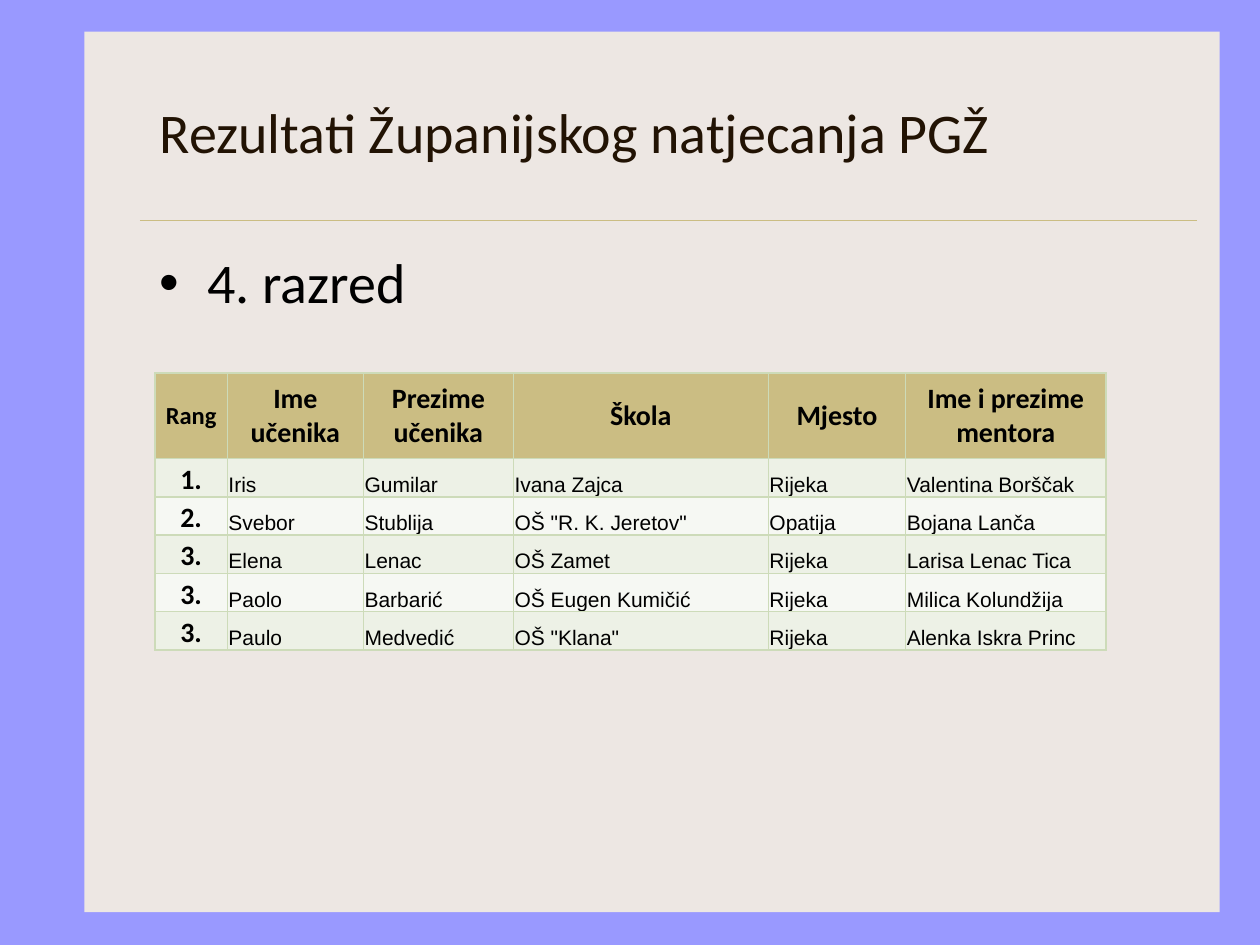
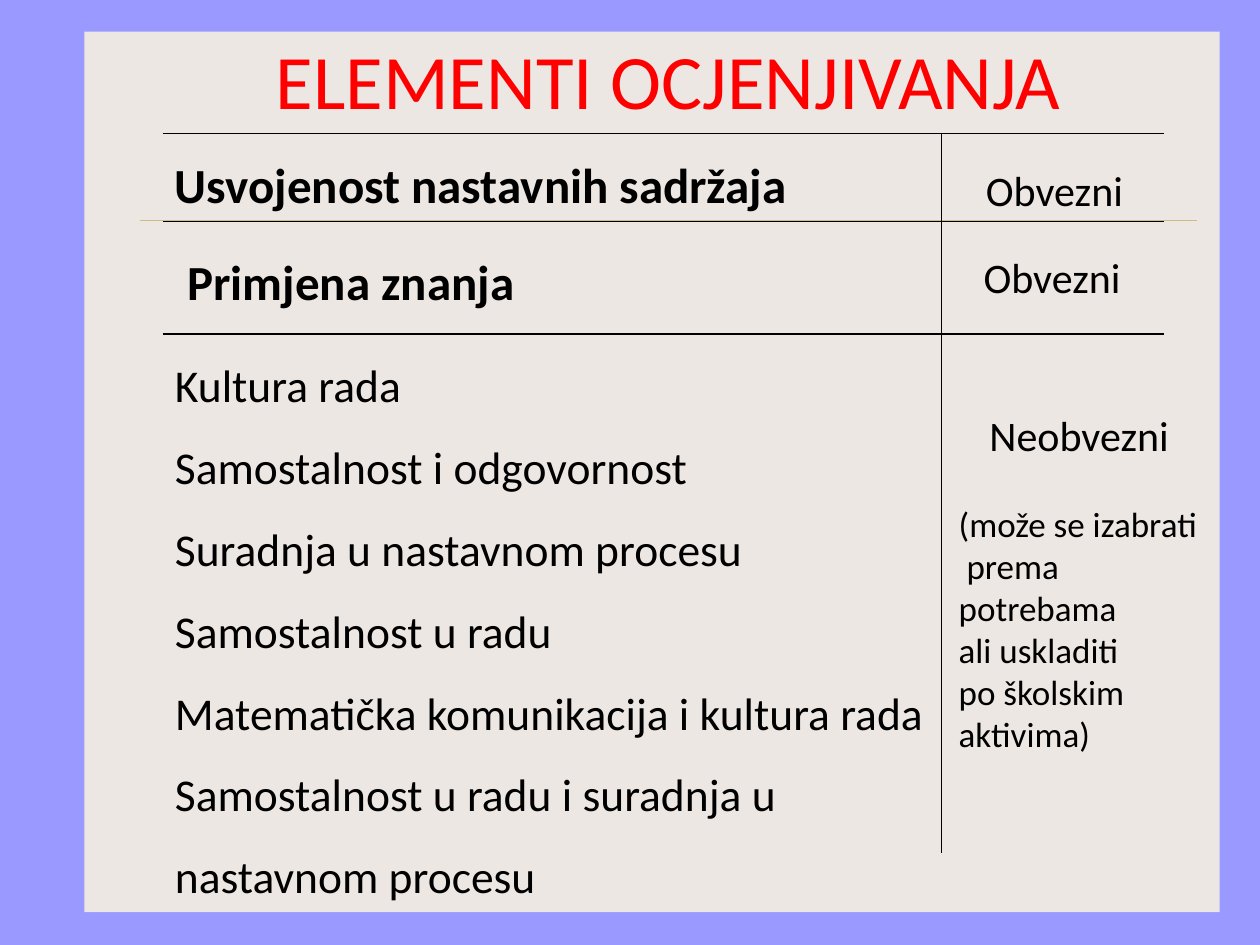
"""Builds two slides: county competition results and grading elements."""
from lxml import etree
from pptx import Presentation
from pptx.dml.color import RGBColor
from pptx.enum import shapes, text
from pptx.oxml import ns
from pptx.util import Pt

PERIWINKLE = RGBColor(0x99, 0x99, 0xFF)
PAPER = RGBColor(0xED, 0xE7, 0xE3)
GOLD = RGBColor(0xCB, 0xBD, 0x83)
BROWN = RGBColor(0x22, 0x13, 0x04)
RED = RGBColor(0xFF, 0, 0)
BLACK = RGBColor(0, 0, 0)
GRID_GREEN = RGBColor(0xCD, 0xDB, 0xB9)
ROW_TINTS = (RGBColor(0xED, 0xF1, 0xE6), RGBColor(0xF6, 0xF8, 0xF3))

LEFT, CENTER = text.PP_ALIGN.LEFT, text.PP_ALIGN.CENTER
TOP, MIDDLE, BOTTOM = (text.MSO_ANCHOR.TOP, text.MSO_ANCHOR.MIDDLE,
                       text.MSO_ANCHOR.BOTTOM)

RESULTS_TITLE = "Rezultati Županijskog natjecanja PGŽ"
GRADE = "4. razred"
HEADINGS = ("Rang", "Ime učenika", "Prezime učenika", "Škola", "Mjesto",
            "Ime i prezime mentora")
PUPILS = (
    ("1.", "Iris", "Gumilar", "Ivana Zajca", "Rijeka", "Valentina Borščak"),
    ("2.", "Svebor", "Stublija", 'OŠ "R. K. Jeretov"', "Opatija", "Bojana Lanča"),
    ("3.", "Elena", "Lenac", "OŠ Zamet", "Rijeka", "Larisa Lenac Tica"),
    ("3.", "Paolo", "Barbarić", "OŠ Eugen Kumičić", "Rijeka", "Milica Kolundžija"),
    ("3.", "Paulo", "Medvedić", 'OŠ "Klana"', "Rijeka", "Alenka Iskra Princ"),
)
RESULTS_AT = (88.6, 213.2)
RESULTS_COLUMNS = (41.3, 77.8, 85.7, 145.7, 78.5, 114.4)
RESULTS_ROWS = (48.8,) + (21.9,) * len(PUPILS)

GRADING_TITLE = "ELEMENTI OCJENJIVANJA"
GRADING_AT = (92.9, 25.9)
GRADING_COLUMNS = (445, 127.4)
GRADING_ROWS = (50.4, 50.4, 64.1, 296.6)
REQUIRED_ELEMENTS = (
    ("Usvojenost nastavnih sadržaja", (92.9, 85, 368, 41)),
    ("Primjena znanja", (100.1, 140.4, 203, 41)),
)
REQUIRED = "Obvezni"
REQUIRED_AT = ((555.8, 90.7, 93.6, 36), (554.4, 140.4, 93.6, 36))
OPTIONAL_ELEMENTS = (
    "Kultura rada", "Samostalnost i odgovornost", "Suradnja u nastavnom procesu",
    "Samostalnost u radu", "Matematička komunikacija i kultura rada",
    "Samostalnost u radu i suradnja u", "nastavnom procesu",
)
OPTIONAL = "Neobvezni"
CHOICE_NOTE = (
    ("(može se izabrati", {"before": 24.4}), ("prema", {"indent": 4.5}),
    ("potrebama", {}), ("ali uskladiti", {}), ("po školskim", {}),
    ("aktivima)", {}),
)


def write(paragraph, words, size=20, font="Calibri", color=BLACK, bold=False,
          align=LEFT, spacing=None, before=0, indent=0, bullet=None):
    """Fill one paragraph with formatted words."""
    properties = paragraph._p.get_or_add_pPr()
    if indent:
        properties.set("marL", str(Pt(indent)))
    if bullet:
        properties.set("indent", str(-Pt(indent)))
        etree.SubElement(properties, ns.qn("a:buFont"), typeface="Arial")
        etree.SubElement(properties, ns.qn("a:buChar"), char=bullet)
    paragraph.alignment = align
    paragraph.space_before = Pt(before)
    if spacing:
        paragraph.line_spacing = spacing
    run = paragraph.add_run()
    run.text = words
    run.font.size, run.font.name, run.font.bold = Pt(size), font, bold
    run.font.color.rgb = color


def add_text(slide, place, lines, anchor=TOP, wrap=False, **style):
    """Add a text box; a line is words or words with their own format."""
    frame = slide.shapes.add_textbox(*map(Pt, place)).text_frame
    frame.word_wrap = wrap
    frame.vertical_anchor = anchor
    if not wrap:
        frame.auto_size = text.MSO_AUTO_SIZE.SHAPE_TO_FIT_TEXT
    for number, line in enumerate(lines):
        words, own = (line, {}) if isinstance(line, str) else line
        paragraph = frame.add_paragraph() if number else frame.paragraphs[0]
        write(paragraph, words, **{**style, **own})


def add_grid(slide, corner, columns, rows):
    """Add an unbanded table with the given column widths and row heights."""
    size = sum(columns), sum(rows)
    grid = slide.shapes.add_table(len(rows), len(columns),
                                  *map(Pt, corner + size)).table
    grid.first_row = grid.horz_banding = False
    for column, width in zip(grid.columns, columns):
        column.width = Pt(width)
    for row, height in zip(grid.rows, rows):
        row.height = Pt(height)
    return grid


def set_borders(cell, color, sides):
    """Draw the named sides of a cell and hide the others."""
    properties = cell._tc.get_or_add_tcPr()
    for side in "LRTB":
        edge = etree.SubElement(properties, ns.qn("a:ln" + side), w=str(Pt(1)))
        if side in sides:
            paint = etree.SubElement(edge, ns.qn("a:solidFill"))
            etree.SubElement(paint, ns.qn("a:srgbClr"), val=str(color))
        else:
            etree.SubElement(edge, ns.qn("a:noFill"))


def add_page(deck):
    """Add a slide with the paper panel and the gold rule."""
    slide = deck.slides.add_slide(deck.slide_layouts[6])
    paper = slide.shapes.add_shape(shapes.MSO_SHAPE.RECTANGLE,
                                   *map(Pt, (48.2, 18, 648.7, 503.3)))
    paper.shadow.inherit = False
    paper.fill.solid()
    paper.fill.fore_color.rgb = PAPER
    paper.line.fill.background()
    rule = slide.shapes.add_connector(shapes.MSO_CONNECTOR.STRAIGHT,
                                      *map(Pt, (79.9, 126, 684, 126)))
    rule.line.color.rgb = GOLD
    rule.line.width = Pt(0.25)
    etree.SubElement(rule._element.spPr, ns.qn("a:effectLst"))
    return slide


def add_title(slide, title, left, top, **style):
    add_text(slide, (left, top, 600, 90), [title], anchor=MIDDLE, wrap=True, **style)


def build_results(deck):
    slide = add_page(deck)
    add_title(slide, RESULTS_TITLE, 84.2, 30.2, size=32, color=BROWN)
    add_text(slide, (84.2, 138.2, 600, 324), [GRADE], wrap=True, size=32,
             indent=27, bullet="•")
    grid = add_grid(slide, RESULTS_AT, RESULTS_COLUMNS, RESULTS_ROWS)
    for r, record in enumerate((HEADINGS,) + PUPILS):
        for c, words in enumerate(record):
            cell = grid.cell(r, c)
            strong = r == 0 or c == 0
            set_borders(cell, GRID_GREEN, "LRTB")
            cell.fill.solid()
            cell.fill.fore_color.rgb = ROW_TINTS[(r - 1) % 2] if r else GOLD
            cell.vertical_anchor = BOTTOM if r else MIDDLE
            cell.margin_left = cell.margin_right = Pt(5 if strong else 0.7)
            cell.margin_top = Pt(0 if strong else 0.7)
            cell.margin_bottom = 0
            style = (dict(size=16 if r or c else 14, bold=True, align=CENTER)
                     if strong else dict(size=12, font="Arial"))
            write(cell.text_frame.paragraphs[0], words, **style)


def build_grading(deck):
    slide = add_page(deck)
    add_title(slide, GRADING_TITLE, 82.1, 0, size=44, color=RED, align=CENTER)
    grid = add_grid(slide, GRADING_AT, GRADING_COLUMNS, GRADING_ROWS)
    last = len(GRADING_ROWS) - 1
    for r in range(last + 1):
        for c, inner in enumerate("RL"):
            cell = grid.cell(r, c)
            sides = ("T" + inner if r else "") + ("B" if r < last else "")
            set_borders(cell, BLACK, sides)
            cell.fill.background()
    grid.cell(0, 0).merge(grid.cell(0, 1))
    for element, place in REQUIRED_ELEMENTS:
        add_text(slide, place, [element], size=28, bold=True)
    for place in REQUIRED_AT:
        add_text(slide, place, [REQUIRED], size=24, align=CENTER)
    add_text(slide, (92.9, 185, 447.1, 338.4), OPTIONAL_ELEMENTS, size=26,
             spacing=1.5)
    heading = (OPTIONAL, {"size": 24, "align": CENTER})
    add_text(slide, (540.7, 230.4, 151.9, 205.9), (heading,) + CHOICE_NOTE)


def main():
    deck = Presentation()
    deck.slide_width, deck.slide_height = Pt(720), Pt(540)
    backdrop = deck.slide_master.background.fill
    backdrop.solid()
    backdrop.fore_color.rgb = PERIWINKLE
    build_results(deck)
    build_grading(deck)
    deck.save("out.pptx")


if __name__ == "__main__":
    main()
